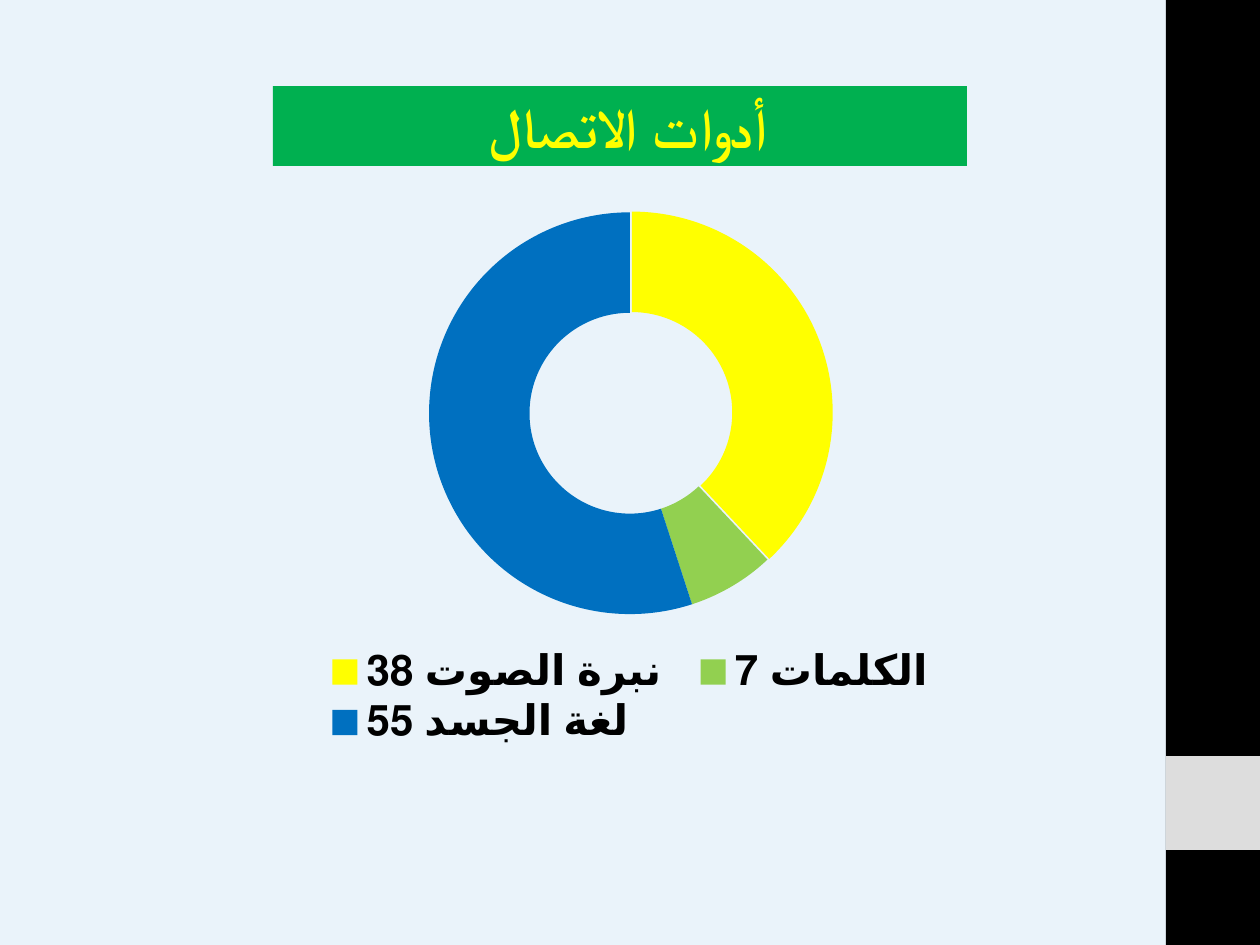
from lxml.etree import SubElement
from pptx import Presentation
from pptx.chart.data import CategoryChartData
from pptx.dml.color import RGBColor
from pptx.enum.chart import XL_CHART_TYPE, XL_LEGEND_POSITION
from pptx.enum.shapes import MSO_SHAPE
from pptx.enum.text import MSO_ANCHOR, PP_ALIGN
from pptx.oxml.ns import qn
from pptx.util import Emu, Pt

THEME = {
    "font": "Lato",
    "title_size": Pt(32),
    "legend_size": Pt(24),
    "background": "EAF3FA",
    "side_band": "000000",
    "side_tab": "DDDDDD",
    "title_fill": "00B050",
    "title_text": "FFFF00",
    "legend_text": "000000",
    "slices": ["FFFF00", "92D050", "0070C0"],
}
EMU_PER_PX = 914400 / 126


def px(*lengths):
    return [Emu(round(length * EMU_PER_PX)) for length in lengths]


def add_block(box, color):
    block = slide.shapes.add_shape(MSO_SHAPE.RECTANGLE, *px(*box))
    block.shadow.inherit = False
    block.fill.solid()
    block.fill.fore_color.rgb = RGBColor.from_string(THEME[color])
    block.line.fill.background()
    return block


presentation = Presentation()
presentation.slide_width, presentation.slide_height = px(1260, 945)
slide = presentation.slides.add_slide(presentation.slide_layouts[6])
slide.background.fill.solid()
slide.background.fill.fore_color.rgb = RGBColor.from_string(THEME["background"])

# Band on the right edge with its tab
add_block((1166, 0, 94, 945), "side_band")
add_block((1166, 756, 94, 94), "side_tab")

# Title, set right to left
title = add_block((273, 86, 694, 80), "title_fill")
title.text_frame.vertical_anchor = MSO_ANCHOR.MIDDLE
title.text_frame.word_wrap = True
heading = title.text_frame.paragraphs[0]
heading.text = "أدوات الاتصال "
heading.alignment = PP_ALIGN.CENTER
heading.font.name = THEME["font"]
heading.font.size = THEME["title_size"]
heading.font.bold = True
heading.font.color.rgb = RGBColor.from_string(THEME["title_text"])
heading._p.get_or_add_pPr().set("rtl", "1")

# Doughnut of the communication tools
tools = CategoryChartData()
tools.categories = ["نبرة الصوت 38 ", "الكلمات 7", "لغة الجسد 55"]
tools.add_series("Series 1", [38, 7, 55])
doughnut = slide.shapes.add_chart(
    XL_CHART_TYPE.DOUGHNUT, *px(210, 193, 840, 559), tools
).chart
doughnut.has_title = False
doughnut.font.name = THEME["font"]
doughnut.font.size = THEME["legend_size"]
doughnut.font.bold = True
doughnut.font.color.rgb = RGBColor.from_string(THEME["legend_text"])
doughnut.has_legend = True
doughnut.legend.position = XL_LEGEND_POSITION.BOTTOM
doughnut.legend.include_in_layout = False

shares = doughnut.plots[0].series[0]
for index, color in enumerate(THEME["slices"]):
    share = shares.points[index]
    share.format.fill.solid()
    share.format.fill.fore_color.rgb = RGBColor.from_string(color)
    share.format.line.fill.background()

# Pull the first slice out slightly
first_slice = shares._element.find(qn("c:dPt"))
explosion = SubElement(first_slice, qn("c:explosion"), val="2")
first_slice.find(qn("c:spPr")).addprevious(explosion)

presentation.save("out.pptx")
